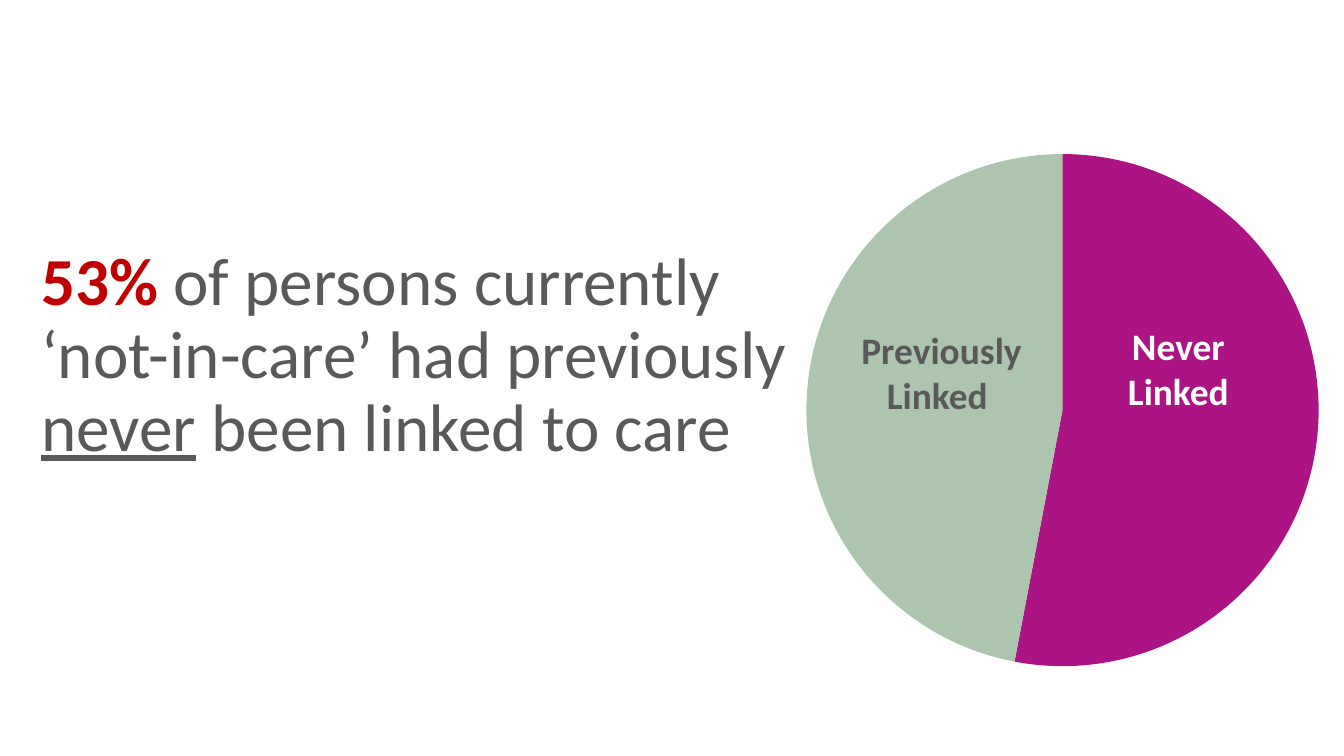
from lxml.etree import SubElement
from pptx import Presentation
from pptx.chart.data import CategoryChartData as ChartData
from pptx.dml.color import RGBColor
from pptx.enum.chart import XL_CHART_TYPE as ChartType
from pptx.enum.text import MSO_ANCHOR as Anchor, PP_ALIGN as Align
from pptx.oxml.ns import qn
from pptx.util import Inches, Pt

RED = RGBColor(0xC0, 0x00, 0x00)
GRAY = RGBColor(0x59, 0x59, 0x59)
WHITE = RGBColor(0xFF, 0xFF, 0xFF)
BLACK = RGBColor(0x00, 0x00, 0x00)
PURPLE = RGBColor(0xAC, 0x14, 0x84)
SAGE = RGBColor(0xAD, 0xC5, 0xAE)


class SlideBuilder:
    """Holds the text style and the slide, and adds each kind of element."""

    font_name = "Calibri"

    def __init__(self, page):
        self.page = page

    def text(self, area, paragraphs, size, align=Align.LEFT, spacing=1.0):
        box = self.page.shapes.add_textbox(*map(Inches, area))
        frame = box.text_frame
        frame.word_wrap = True
        frame.vertical_anchor = Anchor.TOP
        for index, runs in enumerate(paragraphs):
            para = frame.add_paragraph() if index else frame.paragraphs[0]
            para.alignment = align
            para.line_spacing = spacing
            for words, color, bold, underline in runs:
                span = para.add_run()
                span.text = words
                span.font.name = self.font_name
                span.font.size = Pt(size)
                span.font.color.rgb = color
                span.font.bold = bold
                span.font.underline = underline

    def label(self, area, lines, color):
        paragraphs = [[(line, color, True, False)] for line in lines]
        self.text(area, paragraphs, 26.7, Align.CENTER)

    def pie(self, area, categories, values, colors, plot):
        data = ChartData()
        data.categories = categories
        data.add_series("Series 1", values)
        chart = self.page.shapes.add_chart(
            ChartType.PIE, *map(Inches, area), data).chart
        chart.has_title = False
        chart.has_legend = False
        chart.font.name = self.font_name
        chart.font.size = Pt(10)
        chart.font.color.rgb = BLACK
        pie = chart.plots[0]
        pie.vary_by_categories = True
        for index, color in enumerate(colors):
            fill = pie.series[0].points[index].format.fill
            fill.solid()
            fill.fore_color.rgb = color
        self.place_plot(chart, area, plot)

    def place_plot(self, chart, area, plot):
        left, top, width, height = area
        plot_left, plot_top, diameter = plot
        shares = {"x": (plot_left - left) / width,
                  "y": (plot_top - top) / height,
                  "w": diameter / width, "h": diameter / height}
        plot_area = chart.plots[0]._element.getparent()
        for old in plot_area.findall(qn("c:layout")):
            plot_area.remove(old)
        layout = SubElement(plot_area, qn("c:layout"))
        plot_area.insert(0, layout)
        manual = SubElement(layout, qn("c:manualLayout"))
        settings = {"layoutTarget": "inner", "xMode": "edge", "yMode": "edge"}
        settings.update({key: f"{share:.3f}" for key, share in shares.items()})
        for key, value in settings.items():
            SubElement(manual, qn(f"c:{key}")).set("val", value)


def main():
    deck = Presentation()
    deck.slide_width, deck.slide_height = Inches(13.33), Inches(7.5)
    builder = SlideBuilder(deck.slides.add_slide(deck.slide_layouts[6]))
    statement = [
        ("53% ", RED, True, False),
        ("of persons currently ‘not-in-care’ had previously ", GRAY, False, False),
        ("never", GRAY, False, True),
        (" been linked to care", GRAY, False, False),
    ]
    builder.text((0.31, 2.41, 8.1, 0.92), [statement], 48, spacing=0.9)
    builder.pie((6.77, 1.4, 7.53, 5.36), ["1", "2"], [53, 47],
                [PURPLE, SAGE], plot=(8, 1.53, 5.08))
    builder.label((10.54, 3.16, 2.38, 1), ["Never ", "Linked "], WHITE)
    builder.label((8.01, 3.2, 2.66, 1), ["Previously Linked "], GRAY)
    deck.save("out.pptx")


if __name__ == "__main__":
    main()
